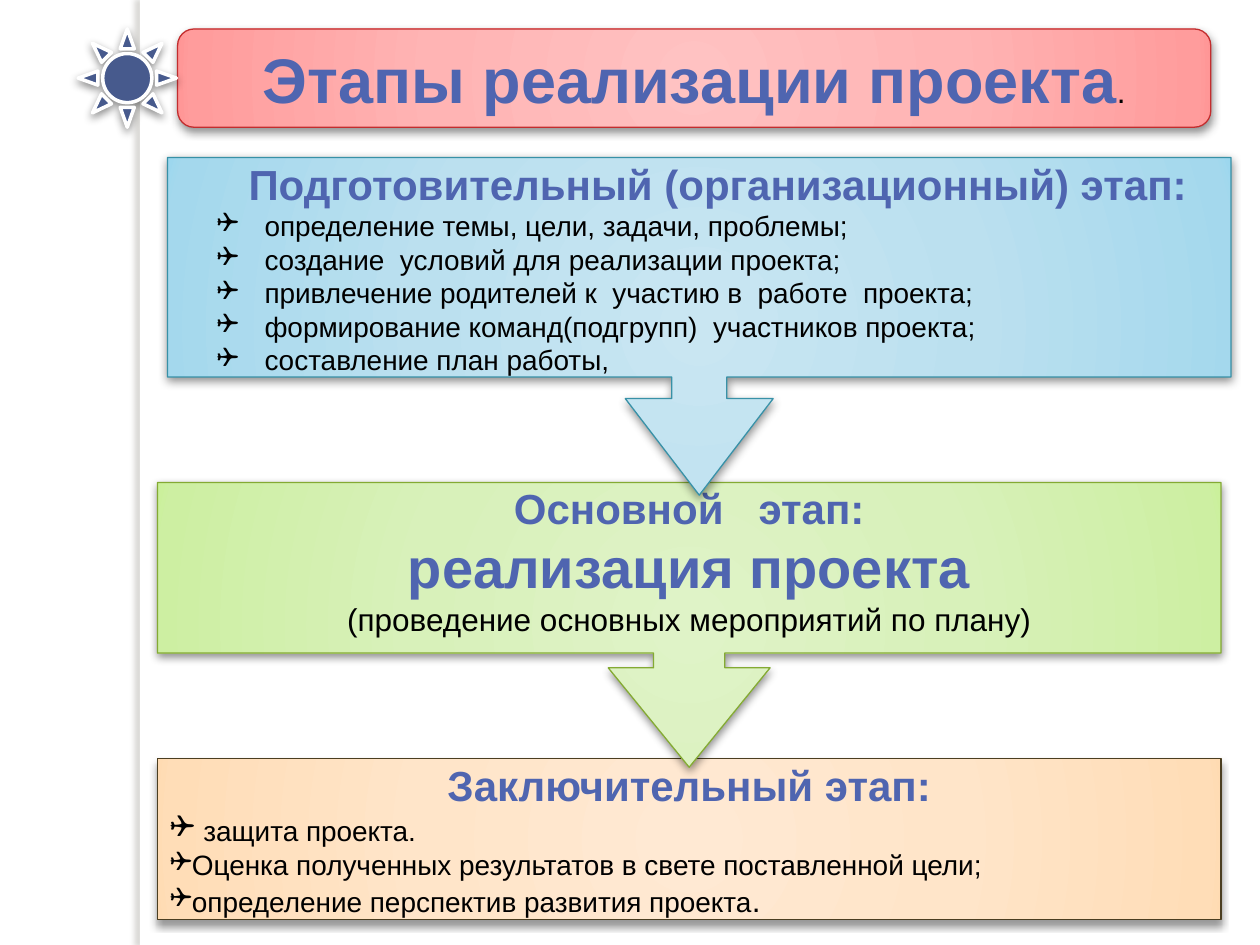
from lxml.etree import SubElement
from pptx import Presentation
from pptx.dml.color import RGBColor
from pptx.enum.shapes import MSO_SHAPE
from pptx.enum.text import MSO_ANCHOR, PP_ALIGN
from pptx.oxml.ns import qn
from pptx.util import Inches, Pt

HEADING, BODY = "4F65B0", "000000"
SOFT_SHADOW = ("000000", 43, 5, 2, 90)
CARD_SHADOW = ("000000", 40, 4, 3, 90)
SPINE_SHADOW = ("736F63", 25, 3, 3, 180)


def rgb(value):
    return RGBColor.from_string(value)


def add_xml(parent, tag, **attributes):
    return SubElement(parent, qn(tag), {key: str(value) for key, value in attributes.items()})


def add_shadow(shape, color, alpha, blur, distance, angle):
    shape.shadow.inherit = False
    effects = shape._element.spPr.find(qn("a:effectLst"))
    shadow = add_xml(effects, "a:outerShdw", blurRad=Pt(blur), dist=Pt(distance),
                     dir=angle * 60000, algn="ctr", rotWithShape=0)
    tint = add_xml(shadow, "a:srgbClr", val=color)
    add_xml(tint, "a:alpha", val=alpha * 1000)


def fill_radial(shape, colors):
    """Fill from the centre outwards with four colours."""
    shape.fill.gradient()
    gradient = shape._element.spPr.find(qn("a:gradFill"))
    for child in list(gradient):
        gradient.remove(child)
    stops = add_xml(gradient, "a:gsLst")
    for position, color in zip((0, 50, 97, 100), colors):
        stop = add_xml(stops, "a:gs", pos=position * 1000)
        add_xml(stop, "a:srgbClr", val=color)
    route = add_xml(gradient, "a:path", path="circle")
    add_xml(route, "a:fillToRect", l=50000, t=50000, r=50000, b=50000)


def add_panel(page, kind, box, colors, line, shadow, line_width=0.75, adjustments=()):
    shape = page.shapes.add_shape(kind, *map(Inches, box))
    for index, value in enumerate(adjustments):
        shape.adjustments[index] = value
    if len(colors) > 1:
        fill_radial(shape, colors)
    else:
        shape.fill.solid()
        shape.fill.fore_color.rgb = rgb(colors[0])
    if line:
        shape.line.color.rgb = rgb(line)
        shape.line.width = Pt(line_width)
    else:
        shape.line.fill.background()
    add_shadow(shape, *shadow)
    return shape


def heading(text, size=24):
    return text, size, HEADING, True


def body(text, size=16):
    return text, size, BODY, False


def write_text(shape, paragraphs, margins=(0.1, 0, 0.1, 0)):
    """Write (hanging indent or None for centred, spans) paragraphs."""
    frame = shape.text_frame
    frame.word_wrap = True
    frame.vertical_anchor = MSO_ANCHOR.MIDDLE
    for side, margin in zip(("left", "top", "right", "bottom"), margins):
        setattr(frame, f"margin_{side}", Inches(margin))
    for index, (hanging, spans) in enumerate(paragraphs):
        para = frame.add_paragraph() if index else frame.paragraphs[0]
        para.alignment = PP_ALIGN.CENTER if hanging is None else PP_ALIGN.LEFT
        if hanging is not None:
            properties = para._p.get_or_add_pPr()
            properties.set("marL", str(Inches(hanging)))
            properties.set("indent", str(-Inches(hanging)))
            add_xml(properties, "a:buFont", typeface="Wingdings")
            add_xml(properties, "a:buChar", char="❑")
        for text, size, color, bold in spans:
            span = para.add_run()
            span.text = text
            for name, value in {"name": "Arial", "size": Pt(size), "bold": bold}.items():
                setattr(span.font, name, value)
            span.font.color.rgb = rgb(color)


def add_spine(page, box):
    add_panel(page, MSO_SHAPE.RECTANGLE, box, ["FFFFFF"], None, SPINE_SHADOW)


def add_sun(page, box):
    add_panel(page, MSO_SHAPE.SUN, box, ["475A8D"], "FFFFFF", SOFT_SHADOW, line_width=2)


def add_title(page, box):
    shape = add_panel(page, MSO_SHAPE.FLOWCHART_ALTERNATE_PROCESS, box,
                      ["FFC2C2", "FFB4B4", "FF9C9C", "FF9595"], "C32D2E", SOFT_SHADOW)
    write_text(shape, [(None, [heading("Этапы реализации проекта", 36), body(".", 18)])],
               (0.1, 0.05, 0.1, 0.05))


def add_preparation(page, box):
    shape = add_panel(page, MSO_SHAPE.DOWN_ARROW_CALLOUT, box,
                      ["C9E6F2", "BBE0EF", "A4D8ED", "9BD7EE"], "3891A7", SOFT_SHADOW,
                      adjustments=(0.163, 0.219, 0.286, 0.65))
    tasks = ["определение темы, цели, задачи, проблемы;",
             "создание  условий для реализации проекта;",
             "привлечение родителей к  участию в  работе  проекта;",
             "формирование команд(подгрупп)  участников проекта;",
             "составление план работы,"]
    write_text(shape, [(None, [heading("Подготовительный (организационный) этап:")])]
               + [(0.38, [body(task)]) for task in tasks], (0.39, 0, 0.1, 0))


def add_main_stage(page, box):
    shape = add_panel(page, MSO_SHAPE.DOWN_ARROW_CALLOUT, box,
                      ["DFF3C7", "D8F1BA", "CDEFA2", "CAF199"], "84AA33", SOFT_SHADOW,
                      adjustments=(0.25, 0.284, 0.349, 0.599))
    write_text(shape, [(None, [heading("Основной   этап:")]),
                       (None, [heading("реализация проекта", 32)]),
                       (None, [body("(проведение основных мероприятий по плану)", 18)])],
               (0.1, 0, 0.1, 0.12))


def add_final_stage(page, box):
    shape = add_panel(page, MSO_SHAPE.RECTANGLE, box,
                      ["FFE9D3", "FFE5C9", "FFDDB7", "FFDBB2"], "4B3E21", CARD_SHADOW)
    write_text(shape, [
        (None, [heading("Заключительный этап:")]),
        (0, [body(" ", 18), body("защита проекта.")]),
        (0, [body("Оценка полученных результатов в свете поставленной цели;")]),
        (0, [body("определение перспектив развития проекта"), body(".", 18)])])


def main():
    deck = Presentation()
    deck.slide_width, deck.slide_height = Inches(10), Inches(7.5)
    page = deck.slides.add_slide(deck.slide_layouts[6])
    add_spine(page, (1.11, 0, 0.08, 7.5))
    add_final_stage(page, (1.25, 6.02, 8.44, 1.28))
    add_title(page, (1.41, 0.23, 8.2, 0.78))
    add_main_stage(page, (1.25, 3.83, 8.44, 2.26))
    add_sun(page, (0.62, 0.23, 0.78, 0.78))
    add_preparation(page, (1.33, 1.25, 8.44, 2.68))
    deck.save("out.pptx")


if __name__ == "__main__":
    main()
